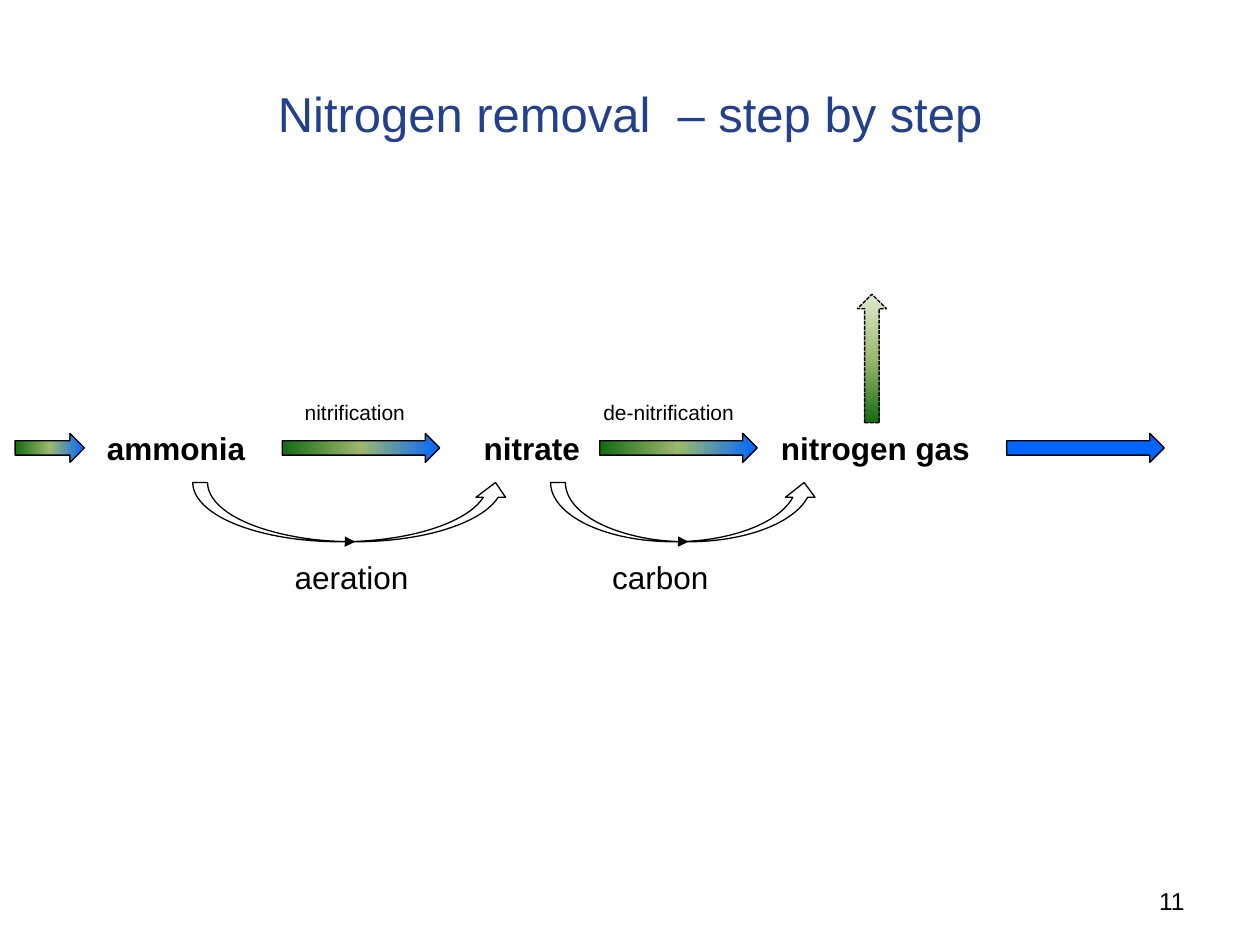
"""Builds the nitrogen removal process slide."""
from dataclasses import dataclass

from lxml.etree import SubElement
from pptx import Presentation
from pptx.dml.color import RGBColor
from pptx.enum.dml import MSO_LINE
from pptx.enum.shapes import MSO_SHAPE as Shape
from pptx.enum.text import MSO_ANCHOR as Anchor, MSO_AUTO_SIZE as AutoSize, PP_ALIGN as Align
from pptx.oxml.ns import qn
from pptx.util import Inches, Pt


@dataclass(frozen=True)
class Theme:
    font: str = "Arial"
    title: str = "22408C"
    ink: str = "000000"
    water: str = "0066FF"
    flow: tuple = ("0066FF", "9CB86E", "156B13")
    gas: tuple = ("DDEBCF", "9CB86E", "156B13")
    title_size: int = 28
    label_size: int = 18
    number_size: int = 14
    process_size: int = 12
    line_width: float = 0.75


THEME = Theme()
TITLE = "Nitrogen removal  – step by step"
PAGE_NUMBER = "11"
STAGES = [("ammonia", 0.75, 1.72), ("nitrate", 3.74, 1.48), ("nitrogen gas", 6.1, 1.8)]
PROCESSES = [("nitrification", 2.32, 1.33), ("de-nitrification", 4.69, 1.64)]
INPUTS = [("aeration", 2.24, 1.18), ("carbon", 4.76, 1.25)]
FLOWS = [(0.12, 0.55, THEME.flow), (2.24, 1.25, THEME.flow),
         (4.76, 1.25, THEME.flow), (7.99, 1.25, THEME.water)]
LOOPS = [(1.53, 2.52), (4.37, 2.13)]
STAGE_TOP, PROCESS_TOP, INPUT_TOP = 3.36, 3.12, 4.38
FLOW_TOP, FLOW_HEIGHT = 3.44, 0.23
LOOP_TOP, LOOP_HEIGHT = 3.83, 0.47


def add_span(para, text, size, color=THEME.ink, bold=False):
    span = para.add_run()
    span.text = text
    span.font.name = THEME.font
    span.font.size = Pt(size)
    span.font.bold = bold
    span.font.color.rgb = RGBColor.from_string(color)


def add_label(page, text, left, top, width, height, size, bold=False):
    box = page.shapes.add_textbox(*map(Inches, (left, top, width, height)))
    box.text_frame.word_wrap = True
    box.text_frame.auto_size = AutoSize.SHAPE_TO_FIT_TEXT
    add_span(box.text_frame.paragraphs[0], text, size, bold=bold)


def fill_gradient(arrow, colors):
    arrow.fill.gradient()
    arrow.fill.gradient_angle = 180
    stops = arrow._element.spPr.find(qn("a:gradFill")).find(qn("a:gsLst"))
    for stop in list(stops):
        stops.remove(stop)
    for index, color in enumerate(colors):
        position = 100000 * index // (len(colors) - 1)
        stop = SubElement(stops, qn("a:gs"), pos=str(position))
        SubElement(stop, qn("a:srgbClr"), val=color)


def add_arrow(page, kind, left, top, width, height, fill=None):
    arrow = page.shapes.add_shape(kind, *map(Inches, (left, top, width, height)))
    arrow.shadow.inherit = False
    if fill is None:
        arrow.fill.background()
    elif isinstance(fill, tuple):
        fill_gradient(arrow, fill)
    else:
        arrow.fill.solid()
        arrow.fill.fore_color.rgb = RGBColor.from_string(fill)
    arrow.line.color.rgb = RGBColor.from_string(THEME.ink)
    arrow.line.width = Pt(THEME.line_width)
    SubElement(arrow._element.spPr.find(qn("a:ln")), qn("a:tailEnd"), type="triangle")
    return arrow


def add_title(page):
    title = page.shapes.title
    title.left, title.top, title.width, title.height = map(Inches, (0.5, 0.61, 9, 0.95))
    title.text_frame.vertical_anchor = Anchor.TOP
    para = title.text_frame.paragraphs[0]
    para.alignment = Align.CENTER
    add_span(para, TITLE, THEME.title_size, THEME.title)


def main():
    deck = Presentation()
    deck.slide_width, deck.slide_height = Inches(10), Inches(7.5)
    page = deck.slides.add_slide(deck.slide_layouts[5])
    add_title(page)
    add_label(page, PAGE_NUMBER, 9.1, 6.98, 0.75, 0.37, THEME.number_size)
    for left, width in LOOPS:
        add_arrow(page, Shape.CURVED_UP_ARROW, left, LOOP_TOP, width, LOOP_HEIGHT)
    for left, width, fill in FLOWS:
        add_arrow(page, Shape.RIGHT_ARROW, left, FLOW_TOP, width, FLOW_HEIGHT, fill)
    gas = add_arrow(page, Shape.RIGHT_ARROW, 6.41, 2.73, 1.02, FLOW_HEIGHT, THEME.gas)
    gas.rotation = 270
    gas.line.dash_style = MSO_LINE.SQUARE_DOT
    for labels, top, height, size, bold in (
        (STAGES, STAGE_TOP, 0.4, THEME.label_size, True),
        (PROCESSES, PROCESS_TOP, 0.3, THEME.process_size, False),
        (INPUTS, INPUT_TOP, 0.4, THEME.label_size, False),
    ):
        for text, left, width in labels:
            add_label(page, text, left, top, width, height, size, bold)
    deck.save("out.pptx")


if __name__ == "__main__":
    main()
